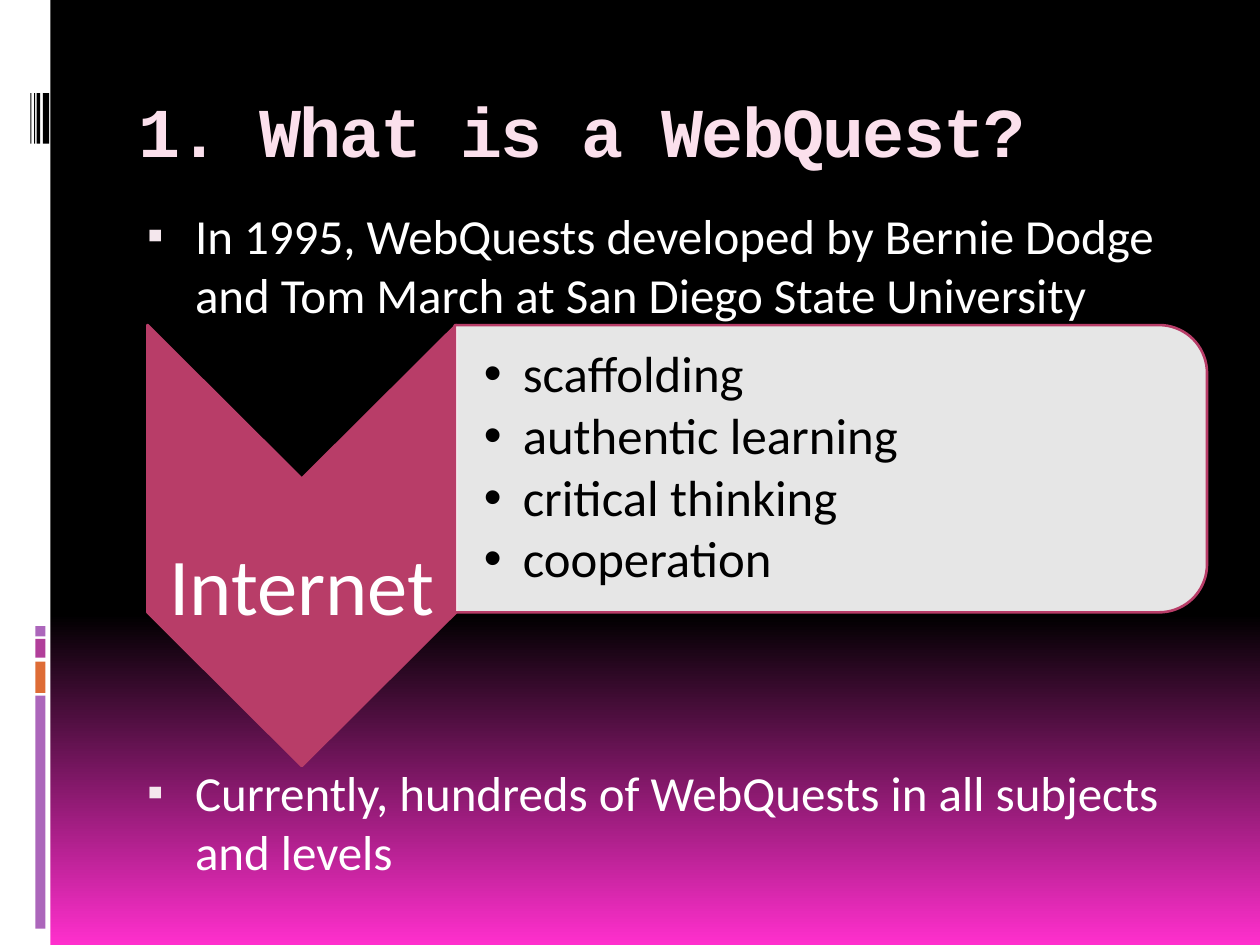
import math
from lxml import etree
from pptx import Presentation, util as u
from pptx.dml.color import RGBColor
from pptx.enum import shapes, text
from pptx.oxml.ns import qn

HEX = {"black": "000000", "pink": "FF2FCD", "white": "FFFFFF",
       "lilac": "AC66BB", "orange": "DE6C36", "plum": "B13F9A",
       "rose": "B83D68", "title": "FBE0EC", "mark": "F4E7ED"}

TITLE = "1. What is a WebQuest?"
FACTS = ["In 1995, WebQuests developed by Bernie Dodge and Tom March "
         "at San Diego State University",
         "Currently, hundreds of WebQuests in all subjects and levels"]
HUB = "Internet"
SKILLS = ["scaffolding", "authentic learning", "critical thinking", "cooperation"]

# left, top, width, height, colour
BARS = [(0, 0, 0.4, 7.5, "white"),
        (0.28, 5.52, 0.08, 1.85, "lilac"),
        (0.28, 5.25, 0.08, 0.25, "orange"),
        (0.28, 5.07, 0.08, 0.15, "plum"),
        (0.28, 4.97, 0.08, 0.08, "lilac")]
BARS += [(x, 0.74, w, 0.4, "black")
         for x, w in ((0.34, 0.05), (0.29, 0.03), (0.27, 0.01), (0.24, 0.01))]


def rgb(name):
    return RGBColor.from_string(HEX[name])


def paint(shape, fill, line=None):
    shape.shadow.inherit = False
    shape.fill.solid()
    shape.fill.fore_color.rgb = rgb(fill)
    if line:
        shape.line.color.rgb = rgb(line)
        shape.line.width = u.Pt(1.5)
    else:
        shape.line.fill.background()


def outline(slide, pts):
    pts = [(u.Inches(x), u.Inches(y)) for x, y in pts]
    pen = slide.shapes.build_freeform(*pts[0])
    pen.add_line_segments(pts[1:], close=True)
    return pen.convert_to_shape()


def setup(frame, anchor, left, top, right, bottom):
    frame.word_wrap = True
    frame.vertical_anchor = anchor
    frame.margin_left, frame.margin_top = u.Inches(left), u.Inches(top)
    frame.margin_right, frame.margin_bottom = u.Inches(right), u.Inches(bottom)


def style(para, size, color, face="Calibri"):
    para.font.size = u.Pt(size)
    para.font.name = face
    para.font.color.rgb = rgb(color)


def bullet(para, char, left, hang, color, scale=100):
    props = para._p.get_or_add_pPr()
    props.set("marL", str(u.Inches(left)))
    props.set("indent", str(-u.Inches(hang)))
    marks = []
    for tag, key, val in (("buClr", None, None), ("buSzPct", "val", str(scale * 1000)),
                          ("buFont", "typeface", "Arial"), ("buChar", "char", char)):
        node = etree.Element(qn("a:" + tag))
        if key:
            node.set(key, val)
        else:
            etree.SubElement(node, qn("a:srgbClr")).set("val", HEX[color])
        marks.append(node)
    rest = props.find(qn("a:defRPr"))
    for node in marks:
        if rest is None:
            props.append(node)
        else:
            rest.addprevious(node)


def fill_list(frame, items):
    """Put one item in each paragraph and return the paragraphs."""
    frame.text = "\n".join(items)
    return frame.paragraphs


def back(slide):
    fill = slide.background.fill
    fill.gradient()
    fill.gradient_angle = 270
    for stop, (pos, color) in zip(fill.gradient_stops, ((0.65, "black"), (1, "pink"))):
        stop.position = pos
        stop.color.rgb = rgb(color)


def head(slide):
    title = slide.shapes.title
    title.left, title.top = u.Inches(1), u.Inches(0.53)
    title.width, title.height = u.Inches(8.5), u.Inches(1)
    title.text = TITLE
    setup(title.text_frame, text.MSO_ANCHOR.MIDDLE, 0.1, 0.05, 0.1, 0.05)
    para = title.text_frame.paragraphs[0]
    para.alignment = text.PP_ALIGN.LEFT
    style(para, 40, "title", "Courier New")
    para.font.bold = True
    para.runs[0]._r.get_or_add_rPr().set("spc", "-100")


def facts(slide):
    box = slide.shapes.add_textbox(*map(u.Inches, (1, 1.58, 8.5, 5.42)))
    setup(box.text_frame, text.MSO_ANCHOR.TOP, 0.1, 0.05, 0.1, 0.05)
    paras = fill_list(box.text_frame, FACTS)
    for para in paras:
        style(para, 28, "white")
        bullet(para, "▪", 0.45, 0.38, "mark", 95)
    paras[1].space_before = u.Pt(251)


def arrow(slide):
    left, top, wide, drop, tip = 1.17, 2.58, 2.45, 2.28, 1.22
    mid, right = left + wide / 2, left + wide
    shape = outline(slide, [(right, top), (right, top + drop), (mid, top + drop + tip),
                            (left, top + drop), (left, top), (mid, top + tip)])
    paint(shape, "rose", "rose")
    setup(shape.text_frame, text.MSO_ANCHOR.MIDDLE, 0.03, 0.7, 0.03, 0)
    para = fill_list(shape.text_frame, [HUB])[0]
    para.alignment = text.PP_ALIGN.CENTER
    para.line_spacing = 0.9
    style(para, 46, "white")


def panel(slide):
    left, top, right, low, rad = 3.61, 2.58, 9.58, 4.86, 0.38
    turns = [math.radians(a) for a in range(0, 91, 5)]
    upper = [(right - rad + rad * math.sin(t), top + rad - rad * math.cos(t))
             for t in turns]
    lower = [(x, top + low - y) for x, y in reversed(upper)]
    shape = outline(slide, [(left, top)] + upper + lower + [(left, low)])
    paint(shape, "white", "rose")
    tint = shape._element.spPr.find(qn("a:solidFill"))[0]
    etree.SubElement(tint, qn("a:alpha")).set("val", "90000")
    setup(shape.text_frame, text.MSO_ANCHOR.MIDDLE, 0.23, 0.13, 0.13, 0.13)
    for para in fill_list(shape.text_frame, SKILLS):
        para.alignment = text.PP_ALIGN.LEFT
        para.line_spacing = 0.9
        para.space_after = u.Pt(4)
        style(para, 29, "black")
        bullet(para, "•", 0.31, 0.31, "black")


def main():
    deck = Presentation()
    deck.slide_width, deck.slide_height = u.Inches(10), u.Inches(7.5)
    slide = deck.slides.add_slide(deck.slide_layouts[5])
    back(slide)
    for *spot, color in BARS:
        bar = slide.shapes.add_shape(shapes.MSO_SHAPE.RECTANGLE, *map(u.Inches, spot))
        paint(bar, color)
    head(slide)
    facts(slide)
    arrow(slide)
    panel(slide)
    deck.save("out.pptx")


if __name__ == "__main__":
    main()
